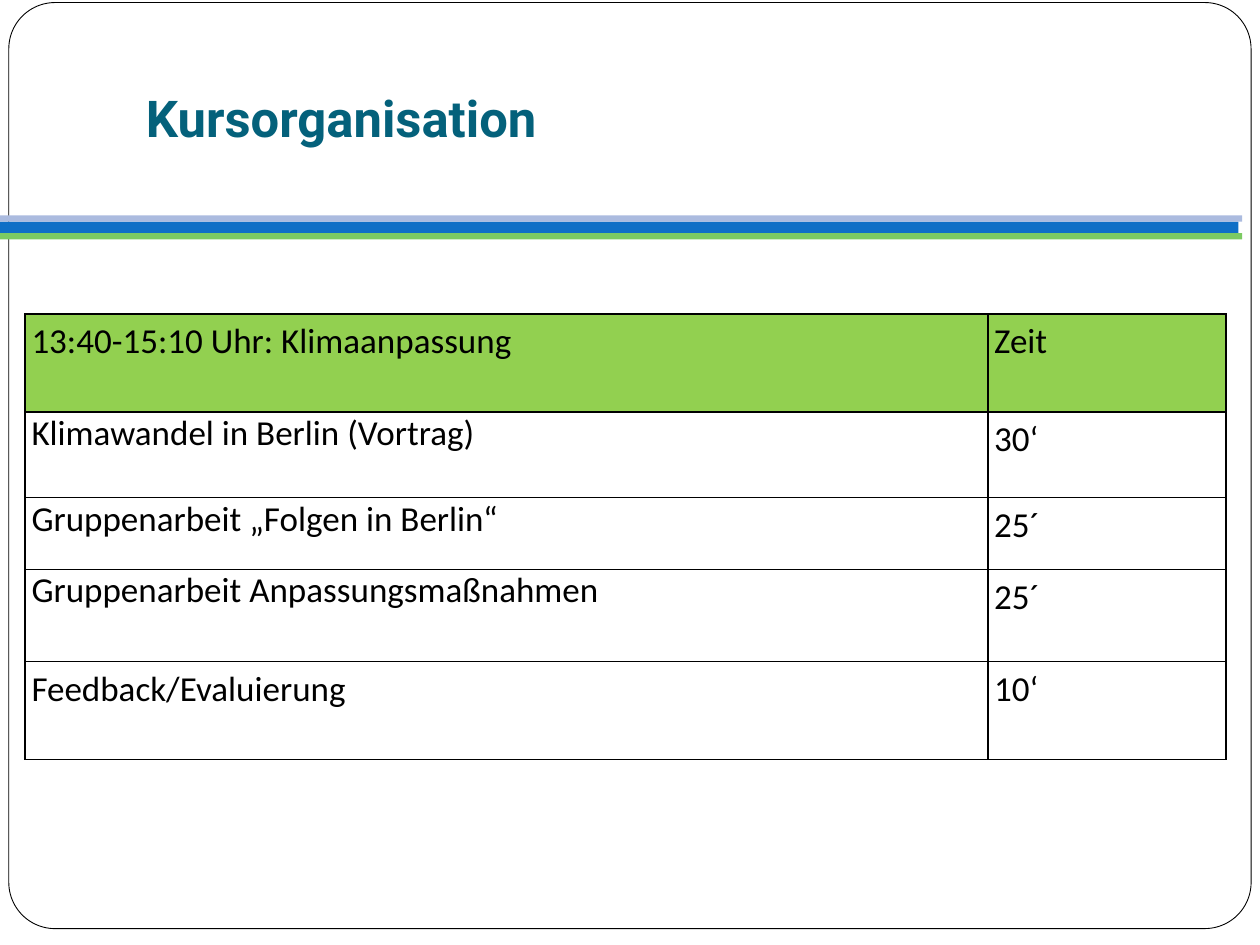
from pptx import Presentation
from pptx.dml.color import RGBColor
from pptx.enum.shapes import MSO_SHAPE
from pptx.enum.text import MSO_ANCHOR, PP_ALIGN
from pptx.oxml.ns import qn
from pptx.util import Inches, Pt
from lxml import etree

RECTANGLE = MSO_SHAPE.RECTANGLE
ROUNDED = MSO_SHAPE.ROUNDED_RECTANGLE
MIDDLE = MSO_ANCHOR.MIDDLE
CENTER = PP_ALIGN.CENTER

COLORS = {
    "white": "FFFFFF",
    "black": "000000",
    "title": "04617B",
    "blue": "0F6FC6",
    "lavender": "ABBBDF",
    "green": "7CCA62",
    "header": "92D050",
}

STRIPES = [
    (-0.03, 1.76, 0.1, "blue"),
    (0, 1.71, 0.05, "lavender"),
    (0, 1.85, 0.05, "green"),
]
STRIPE_WIDTH = 9.86

COLUMN_WIDTHS = [7.64, 1.89]
AGENDA = [
    (0.78, 1.15, "13:40-15:10 Uhr: Klimaanpassung", "Zeit"),
    (0.68, 1.0, "Klimawandel in Berlin (Vortrag)", "30‘"),
    (0.57, 1.0, "Gruppenarbeit „Folgen in Berlin“", "25´"),
    (0.73, 1.0, "Gruppenarbeit Anpassungsmaßnahmen", "25´"),
    (0.78, 1.15, "Feedback/Evaluierung", "10‘"),
]
TIME_SPACING = 1.15

TITLE_FORMAT = {"name": "Roboto", "size": Pt(29), "bold": True}
CELL_FORMAT = {"name": "Calibri", "size": Pt(20), "bold": False}
TITLE_FRAME = {
    "word_wrap": True,
    "vertical_anchor": MIDDLE,
    "margin_left": Inches(0.1),
    "margin_top": Inches(0.05),
    "margin_right": Inches(0.1),
    "margin_bottom": Inches(0.1),
}
CELL_MARGINS = {
    "margin_left": Inches(0.05),
    "margin_top": 0,
    "margin_right": Inches(0.05),
    "margin_bottom": 0,
}


def color(name):
    return RGBColor.from_string(COLORS[name])


def apply(target, values):
    for attribute, value in values.items():
        setattr(target, attribute, value)


def write(paragraph, text, font_values, color_name):
    run = paragraph.add_run()
    run.text = text
    apply(run.font, font_values)
    run.font.color.rgb = color(color_name)


def add_panel(slide, kind, box, fill, line=None):
    panel = slide.shapes.add_shape(kind, *map(Inches, box))
    panel.shadow.inherit = False
    panel.fill.solid()
    panel.fill.fore_color.rgb = color(fill)
    if line:
        panel.line.color.rgb = color(line)
        panel.line.width = Pt(0.5)
    else:
        panel.line.fill.background()
    return panel


def add_title(slide, text):
    title = slide.shapes.add_textbox(*map(Inches, (0.35, 0.21, 4.72, 1.49)))
    apply(title.text_frame, TITLE_FRAME)
    paragraph = title.text_frame.paragraphs[0]
    paragraph.alignment = CENTER
    write(paragraph, text, TITLE_FORMAT, "title")


def add_borders(cell):
    properties = cell._tc.get_or_add_tcPr()
    for position, side in enumerate(("lnL", "lnR", "lnT", "lnB")):
        border = etree.Element(qn(f"a:{side}"), w=str(Pt(1)))
        fill = etree.SubElement(border, qn("a:solidFill"))
        etree.SubElement(fill, qn("a:srgbClr"), val=COLORS["black"])
        properties.insert(position, border)


def fill_cell(cell, text, spacing, is_header):
    apply(cell, CELL_MARGINS)
    if is_header:
        cell.fill.solid()
        cell.fill.fore_color.rgb = color("header")
    else:
        cell.fill.background()
    add_borders(cell)
    paragraph = cell.text_frame.paragraphs[0]
    paragraph.line_spacing = spacing
    write(paragraph, text, CELL_FORMAT, "black")


def add_agenda(slide):
    height = sum(row[0] for row in AGENDA)
    box = (0.2, 2.49, sum(COLUMN_WIDTHS), height)
    agenda = slide.shapes.add_table(
        len(AGENDA), len(COLUMN_WIDTHS), *map(Inches, box)
    ).table
    agenda.horz_banding = False
    for column, width in zip(agenda.columns, COLUMN_WIDTHS):
        column.width = Inches(width)
    for index, (row_height, spacing, topic, duration) in enumerate(AGENDA):
        agenda.rows[index].height = Inches(row_height)
        fill_cell(agenda.cell(index, 0), topic, spacing, index == 0)
        fill_cell(agenda.cell(index, 1), duration, TIME_SPACING, index == 0)


def main():
    presentation = Presentation()
    presentation.slide_width = Inches(10)
    presentation.slide_height = Inches(7.5)
    slide = presentation.slides.add_slide(presentation.slide_layouts[6])

    add_panel(slide, RECTANGLE, (0, 0, 10, 7.5), "white")
    frame = add_panel(slide, ROUNDED, (0.07, 0.02, 9.86, 7.35), "white", "black")
    frame.adjustments[0] = 0.05
    for left, top, height, fill in STRIPES:
        add_panel(slide, RECTANGLE, (left, top, STRIPE_WIDTH, height), fill)
    add_title(slide, "Kursorganisation")
    add_agenda(slide)

    presentation.save("out.pptx")


if __name__ == "__main__":
    main()
